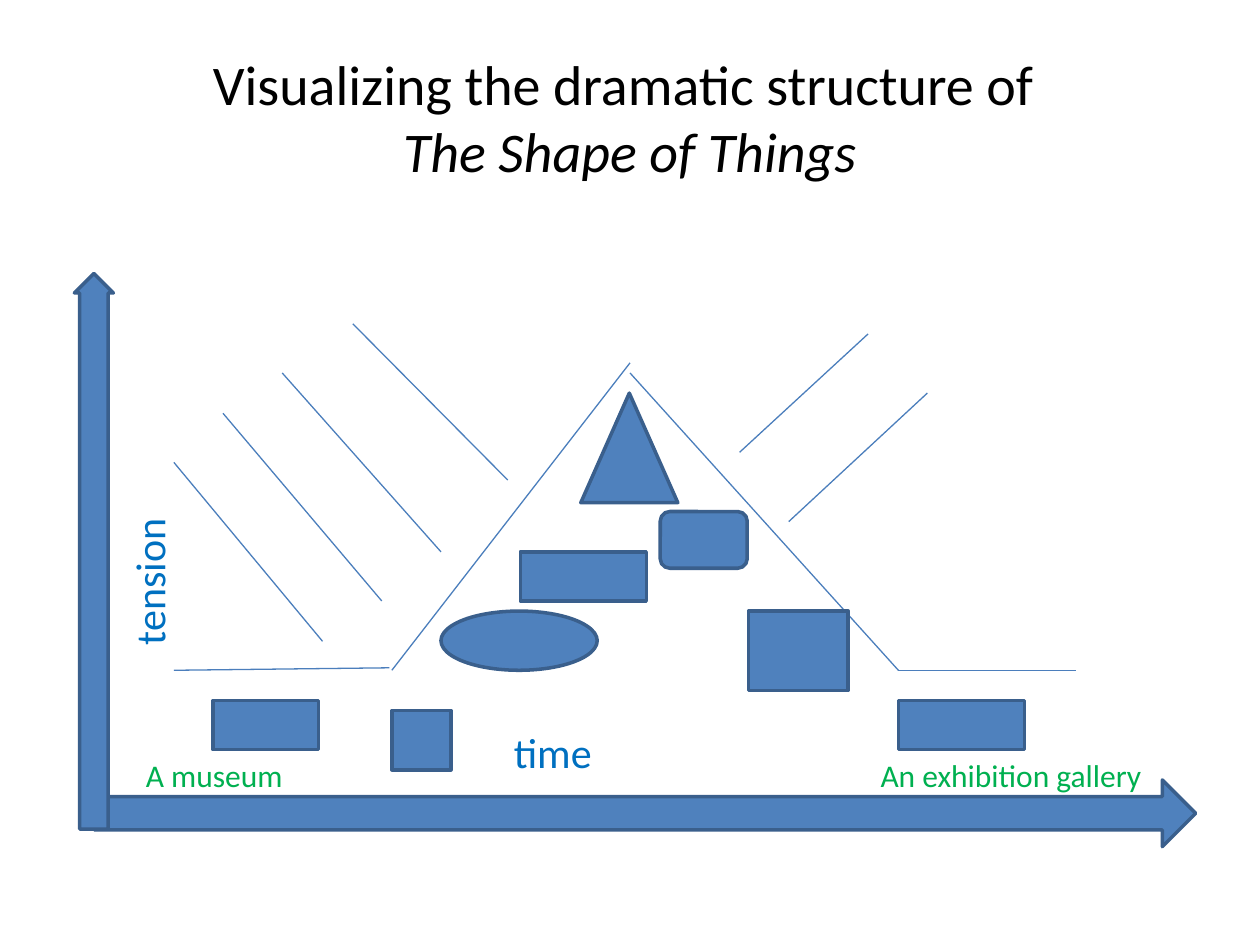
import pptx
import pptx.dml.color
import pptx.enum.shapes
import pptx.enum.text
import pptx.oxml.ns
import pptx.util
from lxml import etree

Inches = pptx.util.Inches
Pt = pptx.util.Pt
SHAPE = pptx.enum.shapes.MSO_SHAPE
FONT = "Calibri"
COLORS = {
    "title": "000000",
    "fill": "4F81BD",
    "outline": "3A5F8C",
    "line": "4B7EBC",
    "axis": "0070C0",
    "place": "00B050",
}

TENSION_CURVE = [
    ((1.38, 5.32), (3.09, 5.3)),
    ((5, 2.88), (3.11, 5.32)),
    ((5, 2.96), (7.13, 5.32)),
    ((7.13, 5.32), (8.54, 5.32)),
]
SLOPE_STROKES = [
    ((1.38, 3.67), (2.56, 5.09)),
    ((1.77, 3.28), (3.03, 4.77)),
    ((2.24, 2.96), (3.5, 4.38)),
    ((2.8, 2.57), (4.03, 3.81)),
    ((7.36, 3.12), (6.26, 4.14)),
    ((5.87, 3.59), (6.89, 2.65)),
]
SCENES = [
    (SHAPE.RECTANGLE, (1.69, 5.56, 0.84, 0.39)),
    (SHAPE.RECTANGLE, (3.11, 5.64, 0.47, 0.47)),
    (SHAPE.RECTANGLE, (5.94, 4.85, 0.79, 0.63)),
    (SHAPE.OVAL, (3.5, 4.85, 1.24, 0.47)),
    (SHAPE.ROUNDED_RECTANGLE, (5.24, 4.06, 0.69, 0.45)),
    (SHAPE.RECTANGLE, (4.13, 4.38, 1, 0.39)),
    (SHAPE.ISOSCELES_TRIANGLE, (4.61, 3.12, 0.77, 0.87)),
    (SHAPE.RECTANGLE, (7.13, 5.56, 1, 0.39)),
]


def rgb(role):
    return pptx.dml.color.RGBColor.from_string(COLORS[role])


def add_run(paragraph, text, size, role, italic=None):
    run = paragraph.add_run()
    run.text = text
    run.font.name = FONT
    run.font.size = Pt(size)
    run.font.color.rgb = rgb(role)
    run.font.italic = italic


def set_title(slide):
    title = slide.shapes.title
    title.left, title.top = Inches(0.5), Inches(0.3)
    title.width, title.height = Inches(9), Inches(1.25)
    title.text_frame.vertical_anchor = pptx.enum.text.MSO_ANCHOR.MIDDLE
    heading = title.text_frame.paragraphs[0]
    heading.alignment = pptx.enum.text.PP_ALIGN.CENTER
    add_run(heading, "Visualizing the dramatic structure of ", 32, "title")
    heading.add_line_break()
    add_run(heading, "The Shape of Things", 32, "title", italic=True)


def add_lines(slide, strokes):
    for start, end in strokes:
        stroke = slide.shapes.add_connector(
            pptx.enum.shapes.MSO_CONNECTOR.STRAIGHT,
            *(Inches(value) for value in start + end),
        )
        stroke.line.color.rgb = rgb("line")
        stroke.line.width = Pt(0.75)
        etree.SubElement(stroke._element.spPr, pptx.oxml.ns.qn("a:effectLst"))


def add_figure(slide, preset, box, rotation=0):
    figure = slide.shapes.add_shape(preset, *(Inches(value) for value in box))
    figure.rotation = rotation
    figure.shadow.inherit = False
    figure.fill.solid()
    figure.fill.fore_color.rgb = rgb("fill")
    figure.line.color.rgb = rgb("outline")
    figure.line.width = Pt(2)
    return figure


def add_label(slide, text, box, size, role, rotation=0):
    label = slide.shapes.add_textbox(*(Inches(value) for value in box))
    label.rotation = rotation
    label.text_frame.word_wrap = True
    label.text_frame.auto_size = pptx.enum.text.MSO_AUTO_SIZE.SHAPE_TO_FIT_TEXT
    add_run(label.text_frame.paragraphs[0], text, size, role)


def main():
    deck = pptx.Presentation()
    deck.slide_width, deck.slide_height = Inches(10), Inches(7.5)
    slide = deck.slides.add_slide(deck.slide_layouts[5])

    set_title(slide)
    add_lines(slide, TENSION_CURVE)

    add_figure(slide, SHAPE.RIGHT_ARROW, (0.75, 6.19, 8.74, 0.53))
    tension_axis = add_figure(
        slide, SHAPE.RIGHT_ARROW, (-1.46, 4.22, 4.41, 0.31), rotation=270
    )
    tension_axis.adjustments[0] = 0.73

    add_label(slide, "time", (3.98, 5.72, 1.34, 0.5), 24, "axis")
    add_label(slide, "tension", (0.56, 4.35, 1.24, 0.5), 24, "axis", rotation=270)
    add_label(slide, "A museum", (1.06, 5.95, 1.3, 0.4), 18, "place")
    add_label(slide, "An exhibition gallery", (6.89, 5.95, 2.77, 0.4), 18, "place")

    for preset, box in SCENES:
        add_figure(slide, preset, box)
    add_lines(slide, SLOPE_STROKES)

    deck.save("out.pptx")


if __name__ == "__main__":
    main()
